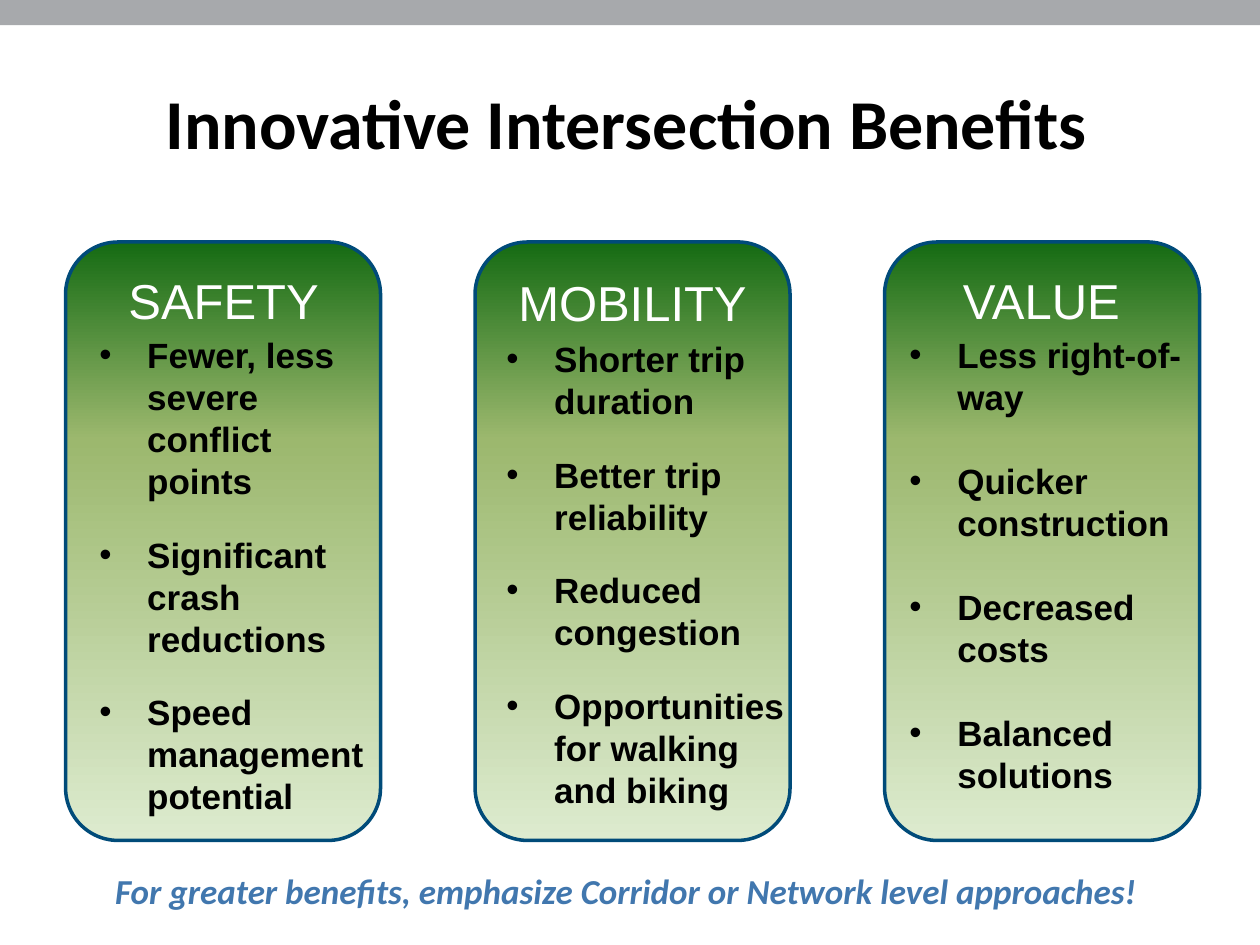
from copy import deepcopy

from lxml.etree import SubElement
from pptx import Presentation
from pptx.dml.color import RGBColor
from pptx.enum.shapes import MSO_SHAPE
from pptx.enum.text import MSO_ANCHOR, PP_ALIGN
from pptx.oxml.ns import qn
from pptx.util import Inches, Pt

BLACK = RGBColor(0x00, 0x00, 0x00)
WHITE = RGBColor(0xFF, 0xFF, 0xFF)
GRAY = RGBColor(0xA7, 0xA9, 0xAC)
NAVY = RGBColor(0x00, 0x4B, 0x79)
BLUE = RGBColor(0x41, 0x77, 0xAE)
PALE_GREEN = RGBColor(0xDD, 0xEB, 0xCF)
MID_GREEN = RGBColor(0x9C, 0xB8, 0x6E)
DARK_GREEN = RGBColor(0x15, 0x6B, 0x13)

GRADIENT = [(0, PALE_GREEN), (0.67, MID_GREEN), (1, DARK_GREEN)]

COLUMNS = [
    ("SAFETY", 0.52, (0.86, 2.1, 1.83, 0.54), (0.19, 2.6, 2.83, 3.97), 18,
     ["Fewer, less severe conflict points", "Significant crash reductions",
      "Speed management potential"]),
    ("VALUE", 7.02, (7.35, 2.1, 1.83, 0.54), (6.62, 2.6, 2.9, 3.8), 24,
     ["Less right-of-way", "Quicker construction", "Decreased costs",
      "Balanced solutions"]),
    ("MOBILITY", 3.77, (3.93, 2.11, 2.18, 0.56), (3.42, 2.63, 3.02, 4.04), 18,
     ["Shorter trip duration", "Better trip reliability",
      "Reduced congestion", "Opportunities for walking and biking"]),
]


def add_text(shapes, box, lines, size, color, font="Arial", bold=False,
             italic=False, anchor=MSO_ANCHOR.TOP, bullet_gap=None):
    frame = shapes.add_textbox(*map(Inches, box)).text_frame
    frame.word_wrap = True
    frame.vertical_anchor = anchor
    for index, line in enumerate(lines):
        paragraph = frame.add_paragraph() if index else frame.paragraphs[0]
        paragraph.alignment = PP_ALIGN.CENTER
        if bullet_gap:
            paragraph.alignment = PP_ALIGN.LEFT
            paragraph.level = 1
            paragraph.space_before = Pt(bullet_gap)
            paragraph.line_spacing = Pt(24)
            properties = paragraph._p.get_or_add_pPr()
            properties.set("marL", str(Inches(0.88)))
            properties.set("indent", str(Inches(-0.38)))
            SubElement(properties, qn("a:buFont"), typeface="Arial")
            SubElement(properties, qn("a:buChar"), char="•")
        run = paragraph.add_run()
        run.text = line
        run.font.name = font
        run.font.size = Pt(size)
        run.font.bold = bold
        run.font.italic = italic
        run.font.color.rgb = color


presentation = Presentation()
presentation.slide_width = Inches(10)
presentation.slide_height = Inches(7.5)
slide = presentation.slides.add_slide(presentation.slide_layouts[6])

top_bar = slide.shapes.add_shape(
    MSO_SHAPE.RECTANGLE, Inches(0), Inches(0), Inches(10), Inches(0.2))
top_bar.shadow.inherit = False
top_bar.fill.solid()
top_bar.fill.fore_color.rgb = GRAY
top_bar.line.fill.background()

for heading, left, heading_box, list_box, gap, benefits in COLUMNS:
    group = slide.shapes.add_group_shape()
    card = group.shapes.add_shape(
        MSO_SHAPE.ROUNDED_RECTANGLE,
        Inches(left), Inches(1.92), Inches(2.5), Inches(4.75))
    card.rotation = 180
    card.shadow.inherit = False
    card.line.color.rgb = NAVY
    card.line.width = Pt(2)
    card.fill.gradient()
    card.fill.gradient_angle = 270
    first_stop = card._element.spPr.find(".//" + qn("a:gs"))
    first_stop.addnext(deepcopy(first_stop))
    for stop, (position, color) in zip(card.fill.gradient_stops, GRADIENT):
        stop.position = position
        stop.color.rgb = color
    add_text(group.shapes, heading_box, [heading], 28, WHITE)
    add_text(group.shapes, list_box, benefits, 20, BLACK,
             bold=True, bullet_gap=gap)

add_text(slide.shapes, (0.19, 0.39, 9.56, 1.15),
         ["Innovative Intersection Benefits"], 40, BLACK,
         font="Calibri", bold=True, anchor=MSO_ANCHOR.MIDDLE)
add_text(slide.shapes, (0.19, 6.85, 9.56, 0.44),
         ["For greater benefits, emphasize Corridor or Network level approaches!"],
         20, BLUE, font="Calibri", bold=True, italic=True)

presentation.save("out.pptx")
